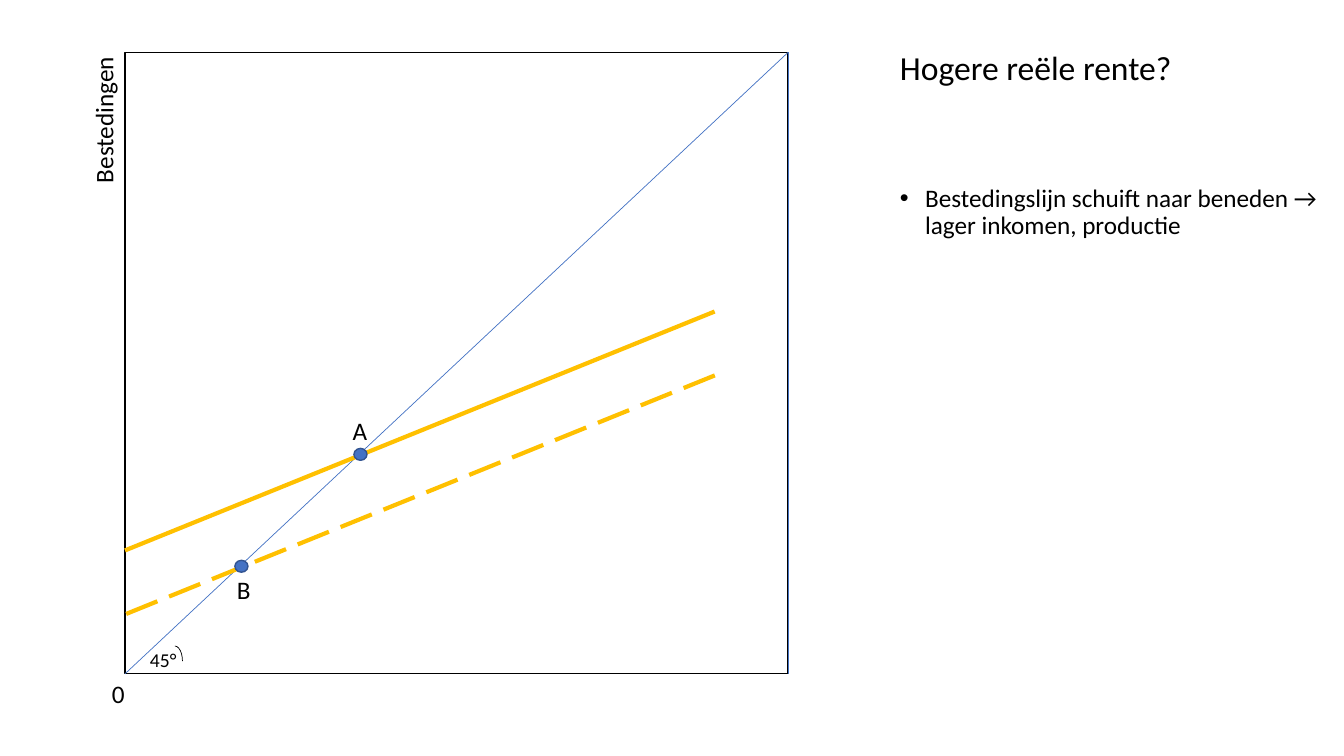
import pptx
import pptx.util
import pptx.dml.color
import pptx.enum.dml
import pptx.enum.shapes
import pptx.enum.text
import lxml.etree
import pptx.oxml.ns

Cm, Pt = pptx.util.Cm, pptx.util.Pt
RGBColor = pptx.dml.color.RGBColor
SHAPE = pptx.enum.shapes.MSO_SHAPE
ANCHOR = pptx.enum.text.MSO_ANCHOR
qn = pptx.oxml.ns.qn

BLACK = RGBColor(0x00, 0x00, 0x00)
BLUE = RGBColor(0x44, 0x72, 0xC4)
DARK_BLUE = RGBColor(0x32, 0x54, 0x91)
GOLD = RGBColor(0xFF, 0xC0, 0x00)
FONT = "Calibri"

# Content, all lengths in centimetres
TITLE = "Hogere reële rente?"
BULLETS = ["Bestedingslijn schuift naar beneden → lager inkomen, productie"]
LEFT, TOP, RIGHT, BOTTOM = 3.15, 1.32, 19.86, 16.98
SPENDING_START, SPENDING_END = (3.15, 13.87), (18.01, 7.85)
SHIFT = (0.03, 1.6)
DOT_SIZE = (0.33, 0.3)
EQUILIBRIA = [  # name, dot corner, label box
    ("A", (8.92, 11.3), (8.64, 10.34, 1.8, 1.02)),
    ("B", (5.92, 14.12), (5.72, 14.35, 2.01, 1.02)),
]
LABELS = [  # text, box, size, rotation
    ("0", (2.57, 16.97, 1.17, 1.02), 18, 0),
    ("45°", (3.53, 16.21, 1.57, 0.86), 14, 0),
    ("Bestedingen", (0.28, 2.03, 4.65, 1.02), 18, 270),
]

deck = pptx.Presentation()
deck.slide_width, deck.slide_height = Cm(33.87), Cm(19.05)
page = deck.slides.add_slide(deck.slide_layouts[6])


def add_text(text, area, size=18, rotation=0, anchor=ANCHOR.TOP,
             spacing=None, before=None, bullet=None):
    box = page.shapes.add_textbox(*map(Cm, area))
    box.rotation = rotation
    frame = box.text_frame
    frame.word_wrap = True
    frame.vertical_anchor = anchor
    para = frame.paragraphs[0]
    para.line_spacing = spacing
    if before:
        para.space_before = Pt(before)
    if bullet:
        props = para._p.get_or_add_pPr()
        props.set("marL", str(Cm(0.635)))
        props.set("indent", str(-Cm(0.635)))
        lxml.etree.SubElement(props, qn("a:buFont")).set("typeface", "Arial")
        lxml.etree.SubElement(props, qn("a:buChar")).set("char", bullet)
    span = para.add_run()
    span.text = text
    span.font.size = Pt(size)
    span.font.name = FONT
    span.font.color.rgb = BLACK


def add_shape(kind, area, line, width, fill=None):
    shape = page.shapes.add_shape(kind, *map(Cm, area))
    shape.shadow.inherit = False
    shape.line.color.rgb = line
    shape.line.width = Pt(width)
    if fill is None:
        shape.fill.background()
    else:
        shape.fill.solid()
        shape.fill.fore_color.rgb = fill


def add_line(start, end, color, width, dash=None):
    line = page.shapes.add_connector(
        pptx.enum.shapes.MSO_CONNECTOR.STRAIGHT, *map(Cm, start + end))
    line.line.color.rgb = color
    line.line.width = Pt(width)
    if dash is not None:
        line.line.dash_style = dash
    lxml.etree.SubElement(line._element.spPr, qn("a:effectLst"))


# Heading and explanation
add_text(TITLE, (22.43, 0.99, 7.67, 1.55), size=24, anchor=ANCHOR.MIDDLE, spacing=0.9)
for bullet_text in BULLETS:
    add_text(bullet_text, (22.43, 4.55, 11.43, 1.93), spacing=0.9, before=10, bullet="•")

# Diagram frame with the 45-degree line
add_shape(SHAPE.RECTANGLE, (LEFT, TOP, RIGHT - LEFT, BOTTOM - TOP), BLACK, 1)
add_line((RIGHT, TOP), (RIGHT, BOTTOM), BLUE, 0.5)
add_line((LEFT, BOTTOM), (RIGHT, TOP), BLUE, 0.5)
add_shape(SHAPE.ARC, (4.22, 16.28, 0.38, 0.76), BLACK, 0.5)

# Spending line before and after the shift
add_line(SPENDING_START, SPENDING_END, GOLD, 3)
shifted = [(x + SHIFT[0], y + SHIFT[1]) for x, y in (SPENDING_START, SPENDING_END)]
add_line(*shifted, GOLD, 3, dash=pptx.enum.dml.MSO_LINE.LONG_DASH)

# Equilibrium points
for name, corner, label_area in EQUILIBRIA:
    add_shape(SHAPE.FLOWCHART_CONNECTOR, corner + DOT_SIZE, DARK_BLUE, 1, fill=BLUE)
    add_text(name, label_area)

# Axis and angle labels
for label, area, size, rotation in LABELS:
    add_text(label, area, size=size, rotation=rotation)

deck.save("out.pptx")
